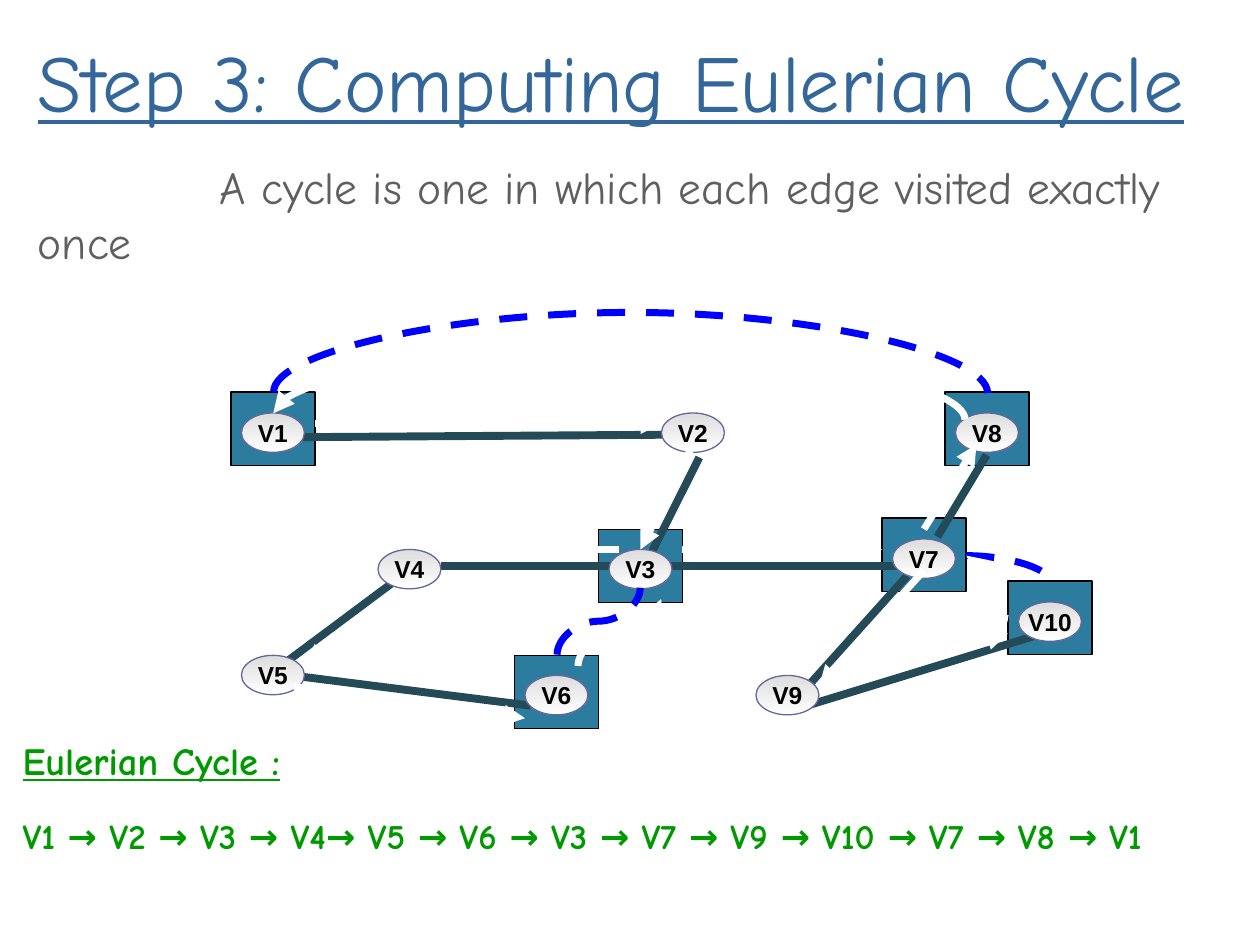
import pptx
import pptx.util
import pptx.dml.color
import pptx.enum.dml
import pptx.enum.shapes
import pptx.enum.text
import pptx.oxml.ns
import lxml.etree

Pt = pptx.util.Pt
qn = pptx.oxml.ns.qn

NODE_WIDTH, NODE_HEIGHT = 36, 22.5
BOX_WIDTH, BOX_HEIGHT = 48, 42
NODES = {
    "V1": (138, 236), "V2": (378, 236), "V8": (546, 236),
    "V4": (216, 314), "V3": (348, 314), "V7": (510, 308),
    "V5": (138, 374.5), "V6": (300, 386), "V9": (432, 386),
    "V10": (582, 344),
}
ODD_NODES = {
    "V10": (576, 332), "V3": (342, 302.5), "V6": (294, 374.5),
    "V7": (504, 296), "V8": (540, 224), "V1": (132, 224),
}
EDGES = [
    (371.5, 317.5, 399.6, 261.4), (462, 403, 592.6, 363),
    (377.3, 323.3, 518.4, 323.3), (518.4, 329, 462, 391.7),
    (229.7, 329, 161.3, 380), (167, 386, 303, 403.2),
    (252, 323.3, 354, 323.3), (172.8, 249.8, 383.8, 248.4),
    (535.7, 306.7, 563.8, 260),
]
TOUR_STEPS = [
    (180, 242, 378, 242), (396, 254, 366, 314), (354, 314, 246, 314),
    (228, 338.4, 174, 380), (168, 392.4, 300, 410.4),
    (390, 314, 504, 314), (528, 326, 468, 392.4),
    (474, 392.4, 576, 362), (528, 302.4, 558, 254),
]
MATCHING_CURVES = [
    dict(box=(360, 20.2, 0.72, 408), rotation=90, flip="flipV", bend=-64),
    dict(box=(552.2, 317.5, 48, 15), preset="curvedConnector2"),
    dict(box=(323, 331.2, 38.2, 47.5), rotation=270, bend=0.5),
]
TOUR_CURVES = [
    dict(box=(335, 337.7, 38.2, 47.5), rotation=270, bend=0.5),
    dict(box=(552.2, 317.5, 23.8, 36), rotation=180, bend=0.5),
    dict(box=(352, 40.3, 3.6, 395.3), rotation=90, flip="flipH", bend=11),
]


def colour(value):
    return pptx.dml.color.RGBColor.from_string(value)


def add_text(paragraph, text, size, font, fill, bold=False, underline=False):
    run = paragraph.add_run()
    run.text = text
    run.font.size = Pt(size)
    run.font.name = font
    run.font.bold = bold
    run.font.underline = underline
    run.font.color.rgb = colour(fill)


def place(shape, left, top, width, height):
    shape.left, shape.top = Pt(left), Pt(top)
    shape.width, shape.height = Pt(width), Pt(height)


def add_box(slide, left, top):
    shape = slide.shapes.add_shape(
        pptx.enum.shapes.MSO_SHAPE.RECTANGLE,
        Pt(left), Pt(top), Pt(BOX_WIDTH), Pt(BOX_HEIGHT))
    shape.shadow.inherit = False
    shape.fill.solid()
    shape.fill.fore_color.rgb = colour("2C7C9F")
    shape.line.color.rgb = colour("000000")
    shape.line.width = Pt(0.75)


def add_node(slide, name, left, top):
    shape = slide.shapes.add_shape(
        pptx.enum.shapes.MSO_SHAPE.FLOWCHART_CONNECTOR,
        Pt(left), Pt(top), Pt(NODE_WIDTH), Pt(NODE_HEIGHT))
    shape.shadow.inherit = False
    shape.fill.gradient()
    shape.fill.gradient_angle = 270
    for stop, value in zip(shape.fill.gradient_stops, ("DDDDDD", "FFFFFF")):
        stop.color.rgb = colour(value)
    stops = shape.fill.gradient_stops
    stops[0].position, stops[1].position = 0, 1
    shape.line.color.rgb = colour("666699")
    shape.line.width = Pt(0.75)
    frame = shape.text_frame
    frame.word_wrap = False
    frame.vertical_anchor = pptx.enum.text.MSO_ANCHOR.MIDDLE
    paragraph = frame.paragraphs[0]
    paragraph.alignment = pptx.enum.text.PP_ALIGN.CENTER
    add_text(paragraph, name, 14, "Arial", "000000", bold=True)


def format_line(connector, fill, width, dashed=False, arrow=False):
    connector.line.color.rgb = colour(fill)
    connector.line.width = Pt(width)
    if dashed:
        connector.line.dash_style = pptx.enum.dml.MSO_LINE.DASH
    properties = connector._element.spPr
    if arrow:
        line = properties.find(qn("a:ln"))
        lxml.etree.SubElement(line, qn("a:tailEnd"), type="triangle")
    lxml.etree.SubElement(properties, qn("a:effectLst"))


def add_line(slide, ends, **style):
    connector = slide.shapes.add_connector(
        pptx.enum.shapes.MSO_CONNECTOR.STRAIGHT, *map(Pt, ends))
    format_line(connector, **style)


def add_curve(slide, box, rotation=0, flip=None, bend=None,
              preset="curvedConnector3", **style):
    left, top, width, height = box
    connector = slide.shapes.add_connector(
        pptx.enum.shapes.MSO_CONNECTOR.CURVE,
        Pt(left), Pt(top), Pt(left + width), Pt(top + height))
    properties = connector._element.spPr
    transform = properties.find(qn("a:xfrm"))
    transform.set("rot", str(rotation * 60000))
    if flip:
        transform.set(flip, "1")
    geometry = properties.find(qn("a:prstGeom"))
    geometry.set("prst", preset)
    if bend is not None:
        lxml.etree.SubElement(geometry.find(qn("a:avLst")), qn("a:gd"),
                              name="adj1", fmla=f"val {int(bend * 100000)}")
    format_line(connector, **style)


def add_label(slide, box, text, size, wrap, underline=False):
    shape = slide.shapes.add_textbox(*map(Pt, box))
    shape.text_frame.word_wrap = wrap
    paragraph = shape.text_frame.paragraphs[0]
    add_text(paragraph, text, size, "Comic Neue", "009900", bold=True,
             underline=underline)
    return paragraph


def fill_headings(slide):
    title, body = slide.placeholders
    place(title, 14.4, 14.4, 697.7, 80)
    place(body, 14.4, 87.5, 697.7, 120)
    for shape in (title, body):
        shape.text_frame.word_wrap = True
        shape.text_frame.auto_size = pptx.enum.text.MSO_AUTO_SIZE.NONE
        shape.text_frame.vertical_anchor = pptx.enum.text.MSO_ANCHOR.TOP
        shape.text_frame.paragraphs[0].alignment = pptx.enum.text.PP_ALIGN.LEFT
    add_text(title.text_frame.paragraphs[0], "Step 3: Computing Eulerian Cycle",
             46, "Comic Neue", "336699", underline=True)
    paragraph = body.text_frame.paragraphs[0]
    paragraph.space_before = Pt(0)
    properties = paragraph._p.get_or_add_pPr()
    properties.set("marL", "0")
    properties.set("indent", str(Pt(104)))
    lxml.etree.SubElement(properties, qn("a:buNone"))
    add_text(paragraph, "A cycle is one in which each edge visited exactly once",
             26, "Comic Neue", "5F5F5F")


def main():
    presentation = pptx.Presentation()
    presentation.slide_width, presentation.slide_height = Pt(720), Pt(540)
    slide = presentation.slides.add_slide(presentation.slide_layouts[1])
    fill_headings(slide)
    for position in ODD_NODES.values():
        add_box(slide, *position)
    for ends in EDGES:
        add_line(slide, ends, fill="244A58", width=4.5)
    for name, position in NODES.items():
        add_node(slide, name, *position)
    for curve in MATCHING_CURVES:
        add_curve(slide, **curve, fill="0000FF", width=4, dashed=True)
    for ends in TOUR_STEPS:
        add_line(slide, ends, fill="FFFFFF", width=4, arrow=True)
    for curve in TOUR_CURVES:
        add_curve(slide, **curve, fill="FFFFFF", width=4, arrow=True)
    add_label(slide, (5.8, 417.6, 183.6, 33.8), "Eulerian Cycle :", 22,
              wrap=False, underline=True)
    add_label(slide, (5.8, 462, 714, 36),
              "V1 → V2 → V3 → V4→ V5 → V6 → V3 → V7 → V9 → V10 → V7 → V8 → V1",
              20, wrap=True)
    presentation.save("out.pptx")


if __name__ == "__main__":
    main()
